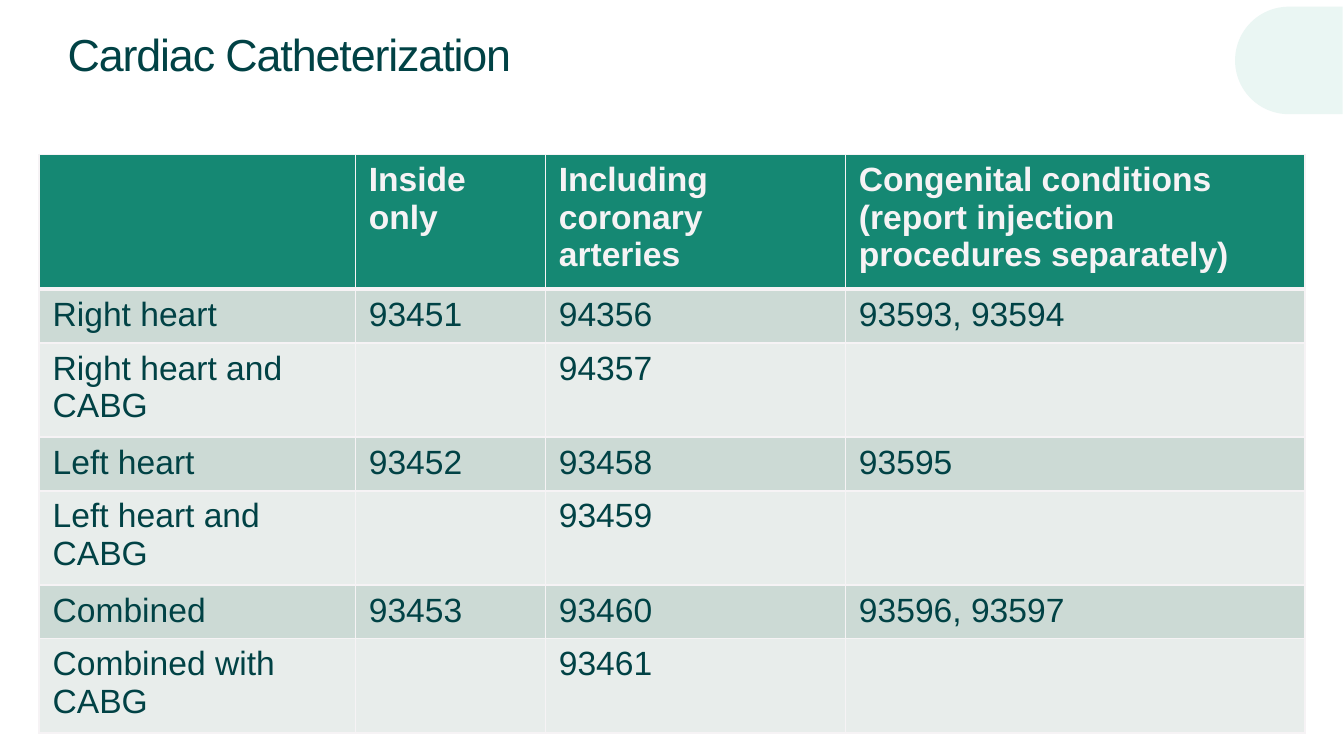
from lxml import etree
from pptx import Presentation
from pptx.dml.color import RGBColor
from pptx.enum.shapes import MSO_SHAPE as SHAPE
from pptx.enum.text import MSO_ANCHOR as ANCHOR
from pptx.oxml.ns import qn
from pptx.util import Pt

# Content
TITLE = "Cardiac Catheterization"
HEADER = [
    "",
    "Inside only",
    "Including coronary arteries",
    "Congenital conditions\n(report injection procedures separately)",
]
ROWS = [
    ["Right heart", "93451", "94356", "93593, 93594"],
    ["Right heart and CABG", "", "94357", ""],
    ["Left heart", "93452", "93458", "93595"],
    ["Left heart and CABG", "", "93459", ""],
    ["Combined", "93453", "93460", "93596, 93597"],
    ["Combined with CABG", "", "93461", ""],
]

# Style
FONT = "Arial"
DARK, LIGHT, GREEN, MINT = "014245", "F6F3F5", "158873", "EAF6F3"
BANDS = ["CCDAD5", "E8EDEB"]
COL_WIDTHS = [169.4, 101.8, 160.8, 246.2]
HEADER_HEIGHT, BAND_HEIGHTS = 40.3, [25.9, 38.2]


def rgb(value):
    return RGBColor.from_string(value)


def add_run(p, text, size, color, bold=False):
    r = p.add_run()
    r.text = text
    r.font.name, r.font.size, r.font.bold = FONT, Pt(size), bold
    r.font.color.rgb = rgb(color)
    return r


def add_border(cell, side, width):
    ln = etree.SubElement(cell._tc.get_or_add_tcPr(), qn(f"a:ln{side}"), w=str(Pt(width)))
    fill = etree.SubElement(ln, qn("a:solidFill"))
    etree.SubElement(fill, qn("a:srgbClr"), val=LIGHT)


def fill_cell(cell, text, row):
    widths = {"L": 1, "R": 1, "T": 3 if row == 1 else 1, "B": 3 if row == 0 else 1}
    for side, width in widths.items():
        add_border(cell, side, width)
    cell.fill.solid()
    cell.fill.fore_color.rgb = rgb(BANDS[(row - 1) % 2] if row else GREEN)
    tf = cell.text_frame
    for i, line in enumerate(text.splitlines()):
        p = tf.add_paragraph() if i else tf.paragraphs[0]
        add_run(p, line, 18, DARK if row else LIGHT, bold=row == 0)


prs = Presentation()
prs.slide_width, prs.slide_height = Pt(720), Pt(405)
s = prs.slides.add_slide(prs.slide_layouts[6])

# Corner ornament, round side to the left
sp = s.shapes.add_shape(SHAPE.FLOWCHART_DELAY, Pt(661.7), Pt(3.6), Pt(57.6), Pt(57.6))
sp.shadow.inherit = False
sp.fill.solid()
sp.fill.fore_color.rgb = rgb(MINT)
sp.line.fill.background()
sp._element.spPr.find(qn("a:xfrm")).set("flipH", "1")

# Title
tf = s.shapes.add_textbox(Pt(23.8), Pt(8), Pt(621.4), Pt(41.8)).text_frame
tf.word_wrap = True
tf.vertical_anchor = ANCHOR.MIDDLE
tf.margin_left, tf.margin_right = Pt(12.4), Pt(6)
tf.margin_top = tf.margin_bottom = Pt(3)
r = add_run(tf.paragraphs[0], TITLE, 24, DARK)
r._r.get_or_add_rPr().set("spc", "-60")

# Code table
heights = [HEADER_HEIGHT] + [BAND_HEIGHTS[i % 2] for i in range(len(ROWS))]
table = s.shapes.add_table(
    len(heights), len(COL_WIDTHS), Pt(21), Pt(82.8), Pt(sum(COL_WIDTHS)), Pt(sum(heights))
).table
for col, width in zip(table.columns, COL_WIDTHS):
    col.width = Pt(width)
for i, (texts, height) in enumerate(zip([HEADER] + ROWS, heights)):
    table.rows[i].height = Pt(height)
    for j, text in enumerate(texts):
        fill_cell(table.cell(i, j), text, i)

prs.save("out.pptx")
